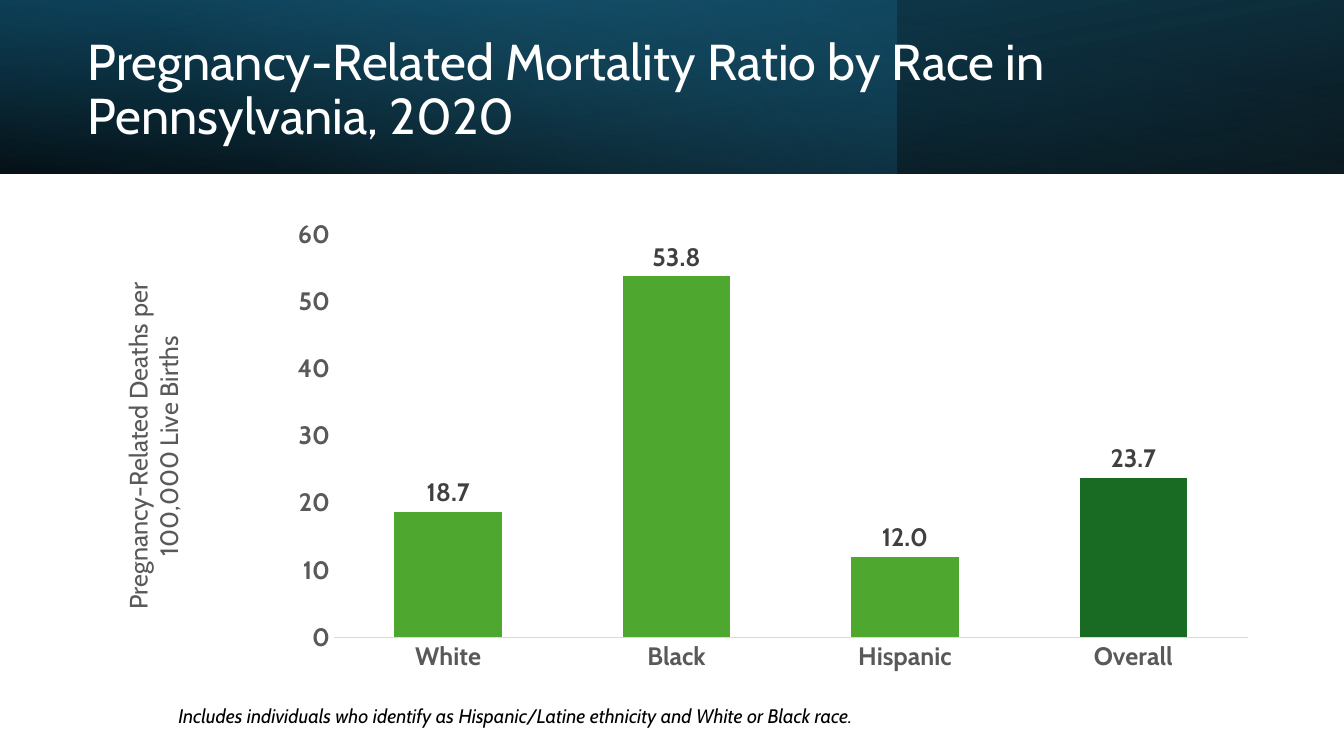
from lxml.etree import SubElement
from pptx import Presentation
from pptx.chart.data import CategoryChartData
from pptx.dml.color import RGBColor
from pptx.enum.chart import XL_CHART_TYPE, XL_LABEL_POSITION, XL_TICK_MARK
from pptx.enum.shapes import MSO_SHAPE
from pptx.enum.text import MSO_ANCHOR, MSO_AUTO_SIZE
from pptx.oxml import parse_xml
from pptx.oxml.ns import nsdecls, qn
from pptx.util import Inches, Pt

FONT = "Cabin"
COLORS = {"white": "FFFFFF", "black": "000000", "gray": "595959", "label": "404040",
          "line": "D9D9D9", "navy": "104862", "teal": "156082", "sky": "46B1E1",
          "green": "4EA72E", "forest": "196B24"}
WIDE, HIGH = 13.33, 7.5
BAND = 1.72
# width, angle, stops (place %, colour, opacity %), xfrm attributes
LAYERS = [
    (WIDE, 100, [(0, "black", 96), (100, "navy", 100)], {"rot": "10800000", "flipH": "1"}),
    (8.89, 140, [(0, "teal", 41), (74, "sky", 0)], {}),
    (WIDE, 260, [(0, "black", 63), (78, "teal", 15)], {"flipH": "1"}),
]
TITLE = "Pregnancy-Related Mortality Ratio by Race in Pennsylvania, 2020"
NOTE = "Includes individuals who identify as Hispanic/Latine ethnicity and White or Black race."
AXIS = "Pregnancy-Related Deaths per 100,000 Live Births"
RATIOS = {"White": 18.7, "Black": 53.8, "Hispanic": 12.0, "Overall": 23.7}
PLOT = {"x": 0.208, "y": 0.069, "w": 0.788, "h": 0.839}
AXIS_AT = {"x": 0.02, "y": 0.16}


def rgb(name):
    return RGBColor.from_string(COLORS[name])


def style(font, size, color, **more):
    font.color.rgb = rgb(color)
    for key, val in {"name": FONT, "size": Pt(size), **more}.items():
        setattr(font, key, val)


def blend(shape, angle, stops):
    """Fill the shape with a linear gradient whose stops carry opacity."""
    marks = "".join(
        f'<a:gs pos="{at * 1000}"><a:srgbClr val="{COLORS[name]}">'
        f'<a:alpha val="{alpha * 1000}"/></a:srgbClr></a:gs>'
        for at, name, alpha in stops)
    grad = parse_xml(f'<a:gradFill {nsdecls("a")} rotWithShape="1"><a:gsLst>{marks}</a:gsLst>'
                     f'<a:lin ang="{angle * 60000}" scaled="0"/></a:gradFill>')
    shape.element.spPr.find(qn("a:prstGeom")).addnext(grad)


def place(layout, spots, inner=False):
    """Pin a chart part at fractions of the chart's size."""
    for old in list(layout):
        layout.remove(old)
    manual = SubElement(layout, qn("c:manualLayout"))
    if inner:
        SubElement(manual, qn("c:layoutTarget"), val="inner")
    for key in ("x", "y"):
        SubElement(manual, qn(f"c:{key}Mode"), val="edge")
    for key, val in spots.items():
        SubElement(manual, qn(f"c:{key}"), val=str(val))


def layout_of(part, after=None):
    """Return the part's layout element, made where it is missing."""
    found = part.find(qn("c:layout"))
    if found is None:
        found = parse_xml(f'<c:layout {nsdecls("c")}/>')
        if after is None:
            part.insert(0, found)
        else:
            part.find(qn(after)).addnext(found)
    return found


def write(slide, box, text, size, color, wrap, **more):
    frame = slide.shapes.add_textbox(*map(Inches, box)).text_frame
    frame.word_wrap = wrap
    para = frame.paragraphs[0]
    run = para.add_run()
    run.text = text
    style(run.font, size, color, **more)
    return frame, para


def draw_band(slide):
    for width, angle, stops, turn in LAYERS:
        shape = slide.shapes.add_shape(MSO_SHAPE.RECTANGLE, 0, 0, Inches(width), Inches(BAND))
        shape.shadow.inherit = False
        shape.line.fill.background()
        blend(shape, angle, stops)
        for key, val in turn.items():
            shape.element.spPr.xfrm.set(key, val)


def draw_chart(slide):
    data = CategoryChartData(number_format="0.0")
    data.categories = list(RATIOS)
    data.add_series("Series 1", list(RATIOS.values()))
    chart = slide.shapes.add_chart(XL_CHART_TYPE.COLUMN_CLUSTERED,
                                   *map(Inches, (0.92, 2, 11.5, 4.76)), data).chart
    chart.has_legend = chart.has_title = False
    style(chart.font, 10, "black")
    plot = chart.plots[0]
    for key, val in {"gap_width": 113, "overlap": -27, "vary_by_categories": False,
                     "has_data_labels": True}.items():
        setattr(plot, key, val)

    bars = plot.series[0]
    bars.format.fill.solid()
    bars.format.fill.fore_color.rgb = rgb("forest")
    for spot, name in enumerate(RATIOS):
        if name != "Overall":
            fill = bars.points[spot].format.fill
            fill.solid()
            fill.fore_color.rgb = rgb("green")

    labels = plot.data_labels
    for key, val in {"show_value": True, "position": XL_LABEL_POSITION.OUTSIDE_END,
                     "number_format": "0.0", "number_format_is_linked": False}.items():
        setattr(labels, key, val)
    style(labels.font, 18, "label", bold=True)

    cats, vals = chart.category_axis, chart.value_axis
    for axis in (cats, vals):
        axis.has_major_gridlines = False
        axis.major_tick_mark = axis.minor_tick_mark = XL_TICK_MARK.NONE
        style(axis.tick_labels.font, 18, "gray", bold=True)
    cats.format.line.color.rgb = rgb("line")
    cats.format.line.width = Pt(0.75)
    vals.format.line.fill.background()
    for key, val in {"minimum_scale": 0, "maximum_scale": 60, "major_unit": 10}.items():
        setattr(vals, key, val)
    vals.tick_labels.number_format = "0"
    vals.tick_labels.number_format_is_linked = False

    frame = vals.axis_title.text_frame
    frame.text = AXIS
    style(frame.paragraphs[0].runs[0].font, 18, "gray", bold=False)
    body = vals.axis_title.element if hasattr(vals.axis_title, "element") else frame._txBody.getparent().getparent()
    turn = body.find(".//" + qn("a:bodyPr"))
    turn.set("rot", "-5400000")
    turn.set("vert", "horz")
    place(layout_of(body, "c:tx"), AXIS_AT)
    place(layout_of(plot._element.getparent()), PLOT, inner=True)


def main():
    deck = Presentation()
    deck.slide_width, deck.slide_height = Inches(WIDE), Inches(HIGH)
    slide = deck.slides.add_slide(deck.slide_layouts[6])
    draw_band(slide)
    frame, para = write(slide, (0.77, 0.27, 12.08, 1.27), TITLE, 36, "white", True)
    frame.vertical_anchor = MSO_ANCHOR.MIDDLE
    para.line_spacing = 0.9
    draw_chart(slide)
    frame, para = write(slide, (1.67, 6.93, 7.43, 0.34), NOTE, 14, "black", False, italic=True)
    frame.auto_size = MSO_AUTO_SIZE.SHAPE_TO_FIT_TEXT
    deck.save("out.pptx")


if __name__ == "__main__":
    main()
